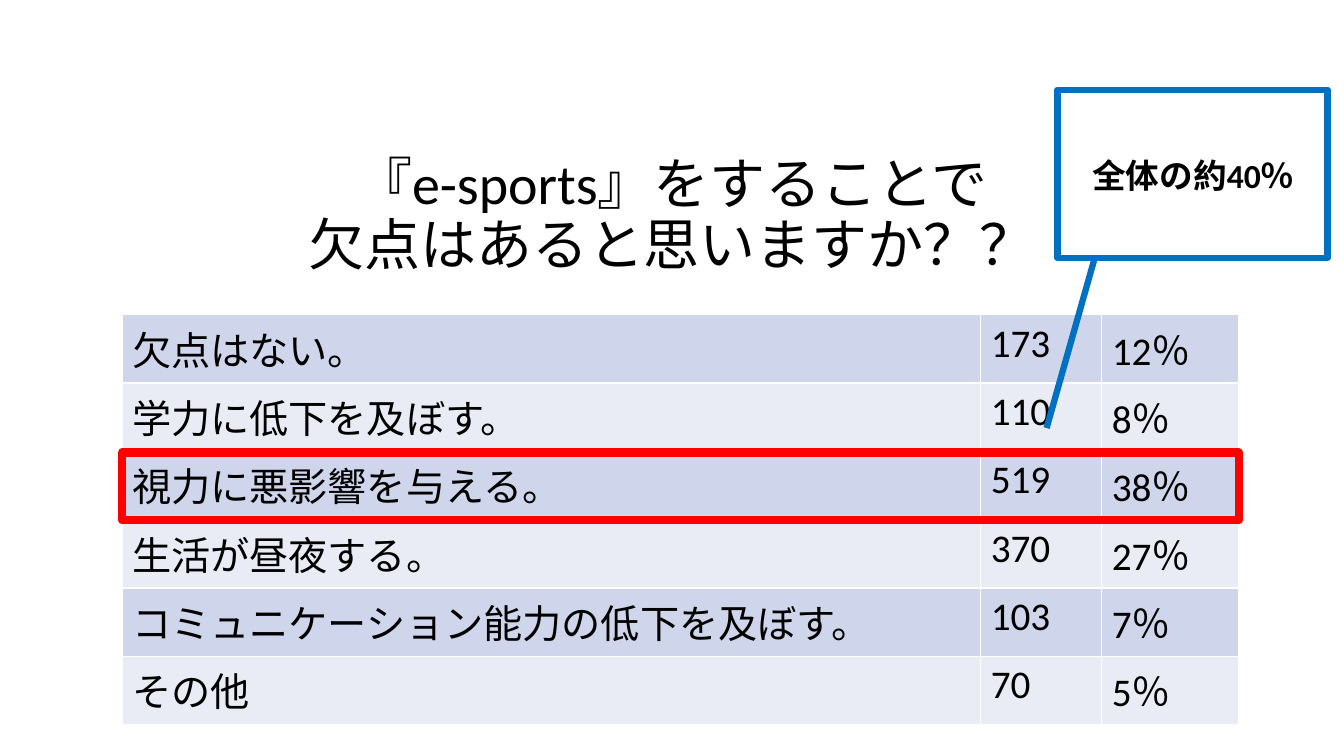
"""Build the survey slide on drawbacks of e-sports."""
from dataclasses import dataclass
from lxml import etree
from pptx import Presentation
from pptx.dml.color import RGBColor
from pptx.enum import shapes, text
from pptx.oxml import ns
from pptx.util import Pt


@dataclass(frozen=True)
class Theme:
    font: str = "Calibri"
    ink: str = "000000"
    edge: str = "FFFFFF"
    bands: tuple[str, str] = ("CFD5EA", "E9EBF5")
    red: str = "FF0000"
    blue: str = "0070C0"
    title: int = 40
    cell: int = 28
    note: int = 24


@dataclass(frozen=True)
class Box:
    left: float
    top: float
    width: float
    height: float

    def area(self) -> tuple:
        return tuple(map(Pt, (self.left, self.top, self.width, self.height)))


@dataclass(frozen=True)
class Label:
    box: Box
    words: str
    size: int
    anchor: text.MSO_ANCHOR
    before: float = 0
    bold: bool = False


@dataclass(frozen=True)
class Frame:
    box: Box
    kind: shapes.MSO_SHAPE
    color: str
    weight: float
    adjust: tuple = ()


@dataclass(frozen=True)
class Answer:
    words: str
    count: int
    share: int


THEME = Theme()
GRID = Box(87.12, 224.8, 797.76, 293.04)
COLS = (613.44, 86.4, 97.92)
ANSWERS = (
    Answer("欠点はない。", 173, 12),
    Answer("学力に低下を及ぼす。", 110, 8),
    Answer("視力に悪影響を与える。", 519, 38),
    Answer("生活が昼夜する。", 370, 27),
    Answer("コミュニケーション能力の低下を及ぼす。", 103, 7),
    Answer("その他", 70, 5),
)
LABELS = (
    Label(Box(120, 88.56, 720, 113.04), "『e-sports』をすることで\v欠点はあると思いますか？？",
          THEME.title, text.MSO_ANCHOR.BOTTOM),
    Label(Box(763.92, 110.16, 177.12, 46.08), "全体の約40％",
          THEME.note, text.MSO_ANCHOR.TOP, 10, True),
)
FRAMES = (
    Frame(Box(GRID.left, 323.28, GRID.width, 48.24),
          shapes.MSO_SHAPE.RECTANGLE, THEME.red, 6),
    Frame(Box(755.28, 64.08, 192.96, 120.24), shapes.MSO_SHAPE.LINE_CALLOUT_1,
          THEME.blue, 4.5, (0.99, 0.14, 2.01, -0.04)),
)


def style(para, size: int, bold: bool = False) -> None:
    font = para.font
    font.name, font.size, font.bold = THEME.font, Pt(size), bold
    font.color.rgb = RGBColor.from_string(THEME.ink)


def border(cell) -> None:
    props = cell._tc.get_or_add_tcPr()
    for side in ("a:lnL", "a:lnR", "a:lnT", "a:lnB"):
        line = etree.SubElement(props, ns.qn(side), w=str(Pt(1)))
        fill = etree.SubElement(line, ns.qn("a:solidFill"))
        etree.SubElement(fill, ns.qn("a:srgbClr"), val=THEME.edge)


def draw_grid(slide) -> None:
    table = slide.shapes.add_table(len(ANSWERS), len(COLS), *GRID.area()).table
    table.first_row = table.horz_banding = False
    for col, width in zip(table.columns, COLS):
        col.width = Pt(width)
    for i, (row, ans) in enumerate(zip(table.rows, ANSWERS)):
        row.height = Pt(GRID.height / len(ANSWERS))
        for cell, words in zip(row.cells, (ans.words, str(ans.count), f"{ans.share}％")):
            cell.text = words
            style(cell.text_frame.paragraphs[0], THEME.cell)
            border(cell)
            cell.fill.solid()
            cell.fill.fore_color.rgb = RGBColor.from_string(THEME.bands[i % 2])


def draw_label(slide, label: Label) -> None:
    frame = slide.shapes.add_textbox(*label.box.area()).text_frame
    frame.word_wrap = True
    frame.vertical_anchor = label.anchor
    para = frame.paragraphs[0]
    para.text = label.words
    para.alignment = text.PP_ALIGN.CENTER
    para.line_spacing = 0.9
    para.space_before = Pt(label.before)
    style(para, label.size, label.bold)


def draw_frame(slide, frame: Frame) -> None:
    shape = slide.shapes.add_shape(frame.kind, *frame.box.area())
    shape.shadow.inherit = False
    shape.fill.background()
    shape.line.color.rgb = RGBColor.from_string(frame.color)
    shape.line.width = Pt(frame.weight)
    for i, value in enumerate(frame.adjust):
        shape.adjustments[i] = value


def main() -> None:
    deck = Presentation()
    deck.slide_width, deck.slide_height = Pt(960), Pt(540)
    slide = deck.slides.add_slide(deck.slide_layouts[6])
    draw_grid(slide)
    for label in LABELS:
        draw_label(slide, label)
    for frame in FRAMES:
        draw_frame(slide, frame)
    deck.save("out.pptx")


if __name__ == "__main__":
    main()
